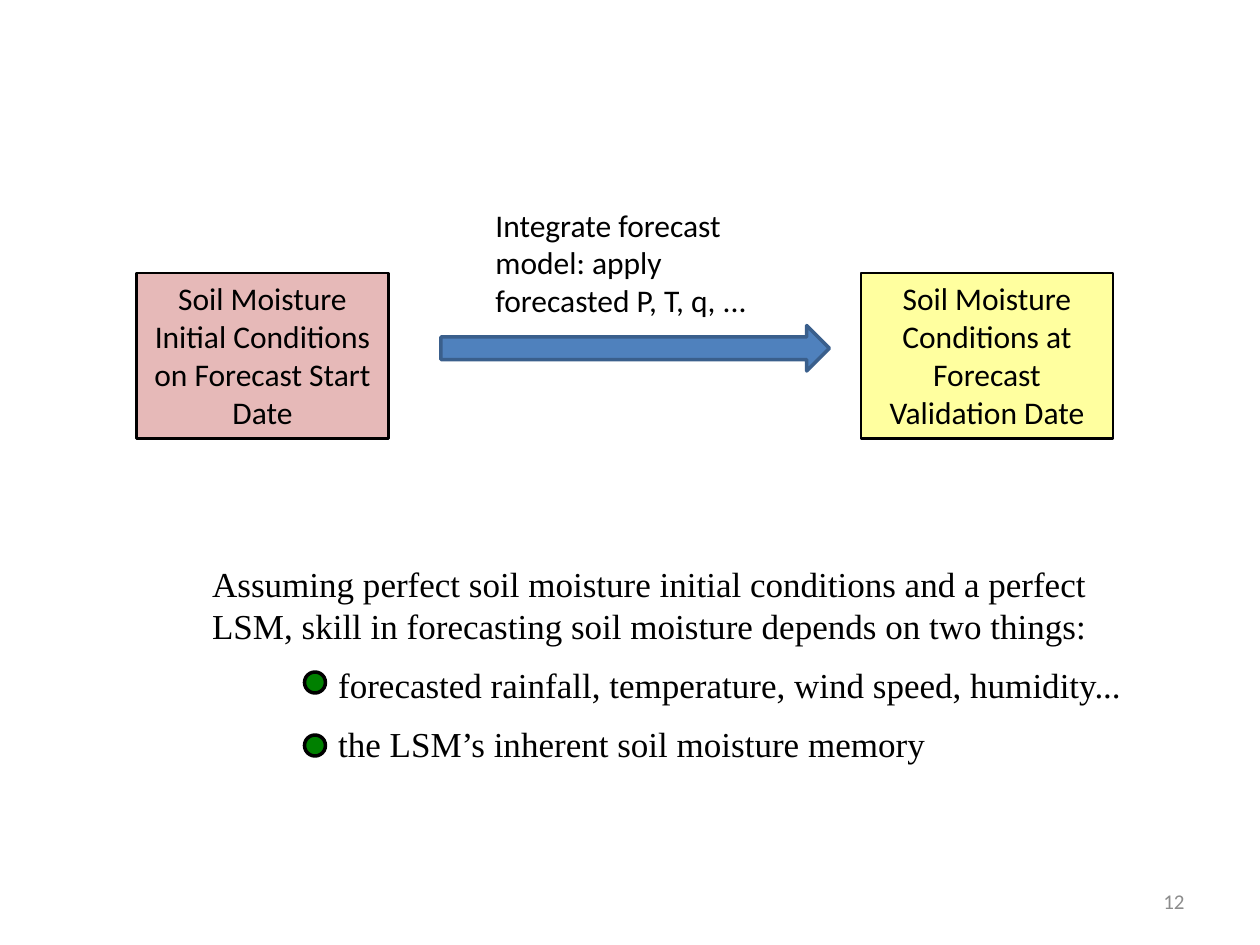
from dataclasses import dataclass

from lxml import etree
from pptx import Presentation
from pptx.dml.color import RGBColor
from pptx.enum.shapes import MSO_SHAPE
from pptx.enum.text import MSO_ANCHOR, MSO_AUTO_SIZE, PP_ALIGN
from pptx.oxml.ns import qn
from pptx.shapes.autoshape import Shape
from pptx.slide import Slide
from pptx.text.text import TextFrame
from pptx.util import Pt

RECTANGLE = MSO_SHAPE.RECTANGLE
RIGHT_ARROW = MSO_SHAPE.RIGHT_ARROW
OVAL = MSO_SHAPE.OVAL
TOP, MIDDLE = MSO_ANCHOR.TOP, MSO_ANCHOR.MIDDLE
LEFT, CENTER, RIGHT = PP_ALIGN.LEFT, PP_ALIGN.CENTER, PP_ALIGN.RIGHT
NO_AUTO_SIZE = MSO_AUTO_SIZE.NONE


@dataclass(frozen=True)
class Theme:
    black: str = "000000"
    grey: str = "8C8C8C"
    pink: str = "E6B9B8"
    yellow: str = "FFFF9F"
    blue: str = "4F81BD"
    dark_blue: str = "3A5F8C"
    green: str = "008000"
    diagram_font: str = "Calibri"
    statement_font: str = "Times New Roman"
    diagram_size: float = 18
    statement_size: float = 20
    number_size: float = 12


@dataclass(frozen=True)
class Box:
    left: float
    top: float
    width: float
    height: float


@dataclass(frozen=True)
class Figure:
    kind: MSO_SHAPE
    box: Box
    fill: str
    line: str
    line_width: float
    lines: tuple[str, ...] = ()


@dataclass(frozen=True)
class TextStyle:
    font: str
    size: float
    color: str
    alignment: PP_ALIGN = LEFT
    anchor: MSO_ANCHOR = TOP


THEME = Theme()
DIAGRAM_LABEL = TextStyle(THEME.diagram_font, THEME.diagram_size, THEME.black)
STATE_LABEL = TextStyle(THEME.diagram_font, THEME.diagram_size, THEME.black, CENTER)
STATEMENT = TextStyle(THEME.statement_font, THEME.statement_size, THEME.black)
PAGE_NUMBER = TextStyle(THEME.diagram_font, THEME.number_size, THEME.grey, RIGHT, MIDDLE)

FIGURES = (
    Figure(RECTANGLE, Box(78, 156, 144, 94.5), THEME.pink, THEME.black, 1.5,
           ("Soil Moisture", "Initial Conditions on Forecast Start Date")),
    Figure(RECTANGLE, Box(492, 156, 144, 94.5), THEME.yellow, THEME.black, 1.5,
           ("Soil Moisture", "Conditions at Forecast Validation Date")),
    Figure(RIGHT_ARROW, Box(252, 186, 222, 26), THEME.blue, THEME.dark_blue, 2),
)
INTRODUCTION = ("Assuming perfect soil moisture initial conditions and a perfect LSM, "
                "skill in forecasting soil moisture depends on two things:")
FACTORS = ("forecasted rainfall, temperature, wind speed, humidity...",
           "the LSM’s inherent soil moisture memory")
STATEMENT_BOX = Box(114, 318, 558, 124)
FACTOR_INDENT = 72
FACTOR_GAP = 9.5
MARKER_TOP = 384
MARKER_STEP = 36


def write_lines(frame: TextFrame, lines: tuple[str, ...], style: TextStyle) -> None:
    frame.text = "\n".join(lines)
    frame.word_wrap = True
    frame.auto_size = NO_AUTO_SIZE
    frame.vertical_anchor = style.anchor
    for paragraph in frame.paragraphs:
        paragraph.alignment = style.alignment
        paragraph.font.name = style.font
        paragraph.font.size = Pt(style.size)
        paragraph.font.color.rgb = RGBColor.from_string(style.color)


def place(shape: Shape, box: Box) -> None:
    shape.left, shape.top = Pt(box.left), Pt(box.top)
    shape.width, shape.height = Pt(box.width), Pt(box.height)


def draw_figure(slide: Slide, figure: Figure) -> None:
    shape = slide.shapes.add_shape(figure.kind, 0, 0, 0, 0)
    place(shape, figure.box)
    shape.shadow.inherit = False
    shape.fill.solid()
    shape.fill.fore_color.rgb = RGBColor.from_string(figure.fill)
    shape.line.color.rgb = RGBColor.from_string(figure.line)
    shape.line.width = Pt(figure.line_width)
    if figure.lines:
        write_lines(shape.text_frame, figure.lines, STATE_LABEL)


def draw_text(slide: Slide, box: Box, text: str, style: TextStyle) -> None:
    shape = slide.shapes.add_textbox(0, 0, 0, 0)
    place(shape, box)
    write_lines(shape.text_frame, (text,), style)


def fill_statement(body: Shape) -> None:
    place(body, STATEMENT_BOX)
    write_lines(body.text_frame, (INTRODUCTION, *FACTORS), STATEMENT)
    for index, paragraph in enumerate(body.text_frame.paragraphs):
        paragraph.space_before = Pt(FACTOR_GAP if index else 0)
        properties = paragraph._p.get_or_add_pPr()
        properties.set("marL", str(Pt(FACTOR_INDENT if index else 0)))
        properties.set("indent", "0")
        bullet = etree.Element(qn("a:buNone"))
        properties.find(qn("a:spcBef")).addnext(bullet)


def main() -> None:
    presentation = Presentation()
    presentation.slide_width, presentation.slide_height = Pt(720), Pt(540)
    slide = presentation.slides.add_slide(presentation.slide_layouts[1])
    title = slide.shapes.title.element
    title.getparent().remove(title)

    for figure in FIGURES:
        draw_figure(slide, figure)
    draw_text(slide, Box(276, 114, 162, 72.5),
              "Integrate forecast model: apply forecasted P, T, q, ...", DIAGRAM_LABEL)
    fill_statement(slide.placeholders[1])
    for index in range(len(FACTORS)):
        marker_box = Box(174, MARKER_TOP + index * MARKER_STEP, 12, 12)
        draw_figure(slide, Figure(OVAL, marker_box, THEME.green, THEME.black, 2))
    draw_text(slide, Box(516, 500.5, 168, 29), "12", PAGE_NUMBER)

    presentation.save("out.pptx")


if __name__ == "__main__":
    main()
